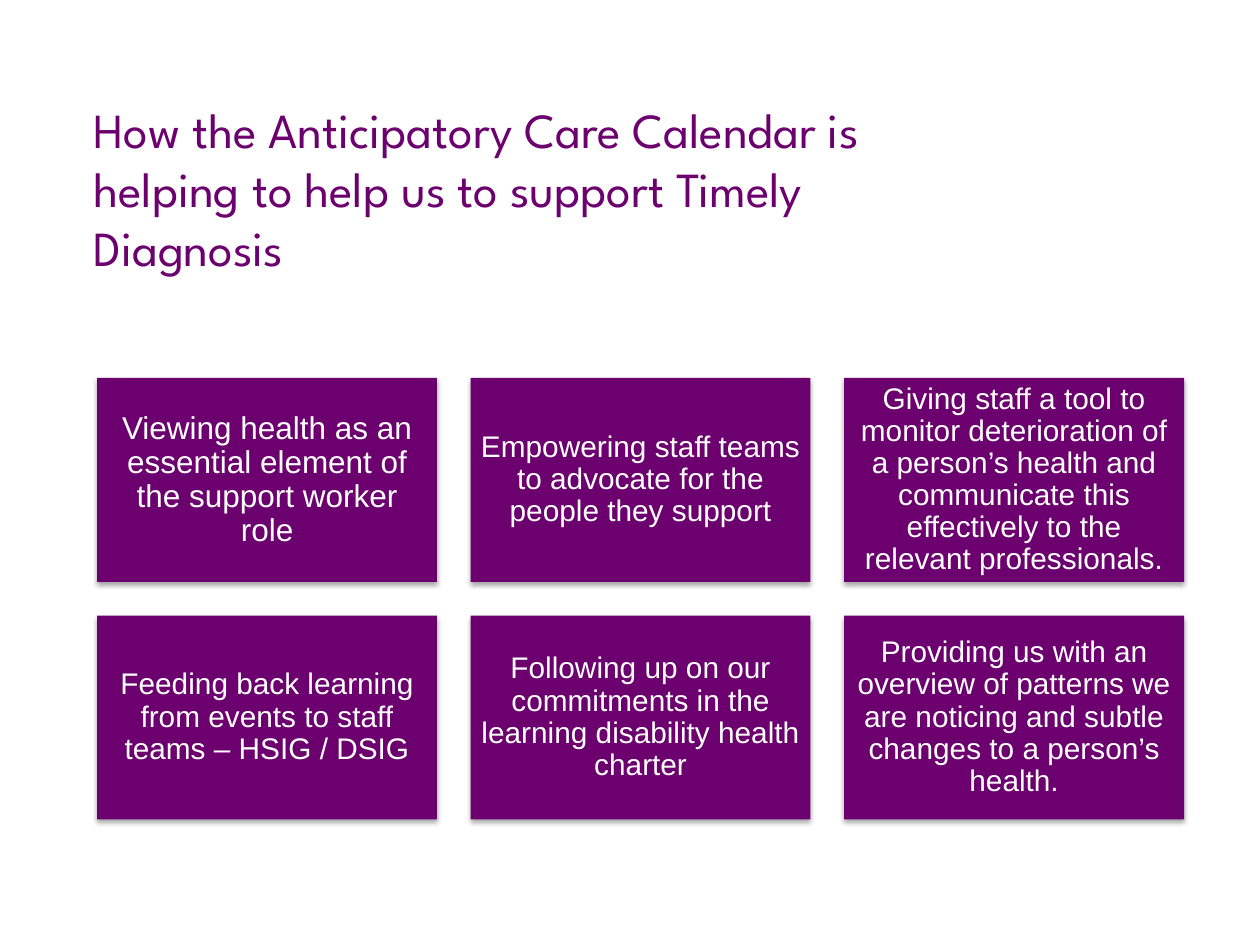
"""Build a slide with six ways the Anticipatory Care Calendar supports timely diagnosis."""
from dataclasses import dataclass

from lxml import etree
from pptx import Presentation
from pptx.dml.color import RGBColor
from pptx.enum.shapes import MSO_SHAPE
from pptx.enum.text import MSO_ANCHOR, MSO_AUTO_SIZE, PP_ALIGN
from pptx.oxml.ns import qn
from pptx.slide import Slide
from pptx.util import Cm, Pt

RECTANGLE = MSO_SHAPE.RECTANGLE
MIDDLE = MSO_ANCHOR.MIDDLE
NO_AUTOFIT = MSO_AUTO_SIZE.NONE
LEFT, CENTER = PP_ALIGN.LEFT, PP_ALIGN.CENTER

PURPLE = RGBColor(0x6C, 0x00, 0x6F)
WHITE = RGBColor(0xFF, 0xFF, 0xFF)
BLACK = RGBColor(0x00, 0x00, 0x00)

COLUMNS = 3
GRID_LEFT, GRID_TOP = Cm(1.96), Cm(7.62)
CARD_WIDTH, CARD_HEIGHT = Cm(6.85), Cm(4.11)
GAP = Cm(0.68)
CARD_INSET = Cm(0.18)


@dataclass(frozen=True)
class Benefit:
    text: str
    size: int = 17


BENEFITS = [
    Benefit("Viewing health as an essential element of the support worker role", 18),
    Benefit("Empowering staff teams to advocate for the people they support"),
    Benefit("Giving staff a tool to monitor deterioration of a person’s health and "
            "communicate this effectively to the relevant professionals."),
    Benefit("Feeding back learning from events to staff teams – HSIG / DSIG"),
    Benefit("Following up on our commitments in the learning disability health charter"),
    Benefit("Providing us with an overview of patterns we are noticing and subtle "
            "changes to a person’s health."),
]


def add_run(paragraph, text: str, font_name: str, size: int, color: RGBColor) -> None:
    run = paragraph.add_run()
    run.text = text
    run.font.name = font_name
    run.font.size = Pt(size)
    run.font.color.rgb = color


def add_soft_shadow(card) -> None:
    card.shadow.inherit = False
    effects = card._element.spPr.find(qn("a:effectLst"))
    shadow = etree.SubElement(effects, qn("a:outerShdw"), blurRad=str(Pt(3.1)),
                              dist=str(Pt(1.8)), dir="5400000", rotWithShape="0")
    shade = etree.SubElement(shadow, qn("a:srgbClr"), val=str(BLACK))
    etree.SubElement(shade, qn("a:alpha"), val="35000")


def add_heading(slide: Slide, text: str) -> None:
    heading = slide.shapes.title
    heading.left, heading.top = Cm(1.63), Cm(2.59)
    heading.width, heading.height = Cm(18.31), Cm(2.39)
    frame = heading.text_frame
    frame.auto_size = NO_AUTOFIT
    frame.word_wrap = True
    frame.vertical_anchor = MIDDLE
    paragraph = frame.paragraphs[0]
    paragraph.alignment = LEFT
    add_run(paragraph, text, "League Spartan", 28, PURPLE)


def add_card(slide: Slide, benefit: Benefit, row: int, column: int) -> None:
    card = slide.shapes.add_shape(
        RECTANGLE,
        GRID_LEFT + column * (CARD_WIDTH + GAP),
        GRID_TOP + row * (CARD_HEIGHT + GAP),
        CARD_WIDTH, CARD_HEIGHT)
    card.fill.solid()
    card.fill.fore_color.rgb = PURPLE
    card.line.fill.background()
    add_soft_shadow(card)
    frame = card.text_frame
    frame.word_wrap = True
    frame.vertical_anchor = MIDDLE
    frame.margin_left = frame.margin_right = CARD_INSET
    frame.margin_top = frame.margin_bottom = CARD_INSET
    paragraph = frame.paragraphs[0]
    paragraph.alignment = CENTER
    paragraph.line_spacing = 0.9
    add_run(paragraph, benefit.text, "Arial", benefit.size, WHITE)


def main() -> None:
    presentation = Presentation()
    presentation.slide_width, presentation.slide_height = Cm(25.4), Cm(19.05)
    slide = presentation.slides.add_slide(
        presentation.slide_layouts.get_by_name("Title Only"))
    add_heading(slide, "How the Anticipatory Care Calendar is helping to help us "
                       "to support Timely Diagnosis")
    for index, benefit in enumerate(BENEFITS):
        add_card(slide, benefit, *divmod(index, COLUMNS))
    presentation.save("out.pptx")


if __name__ == "__main__":
    main()
